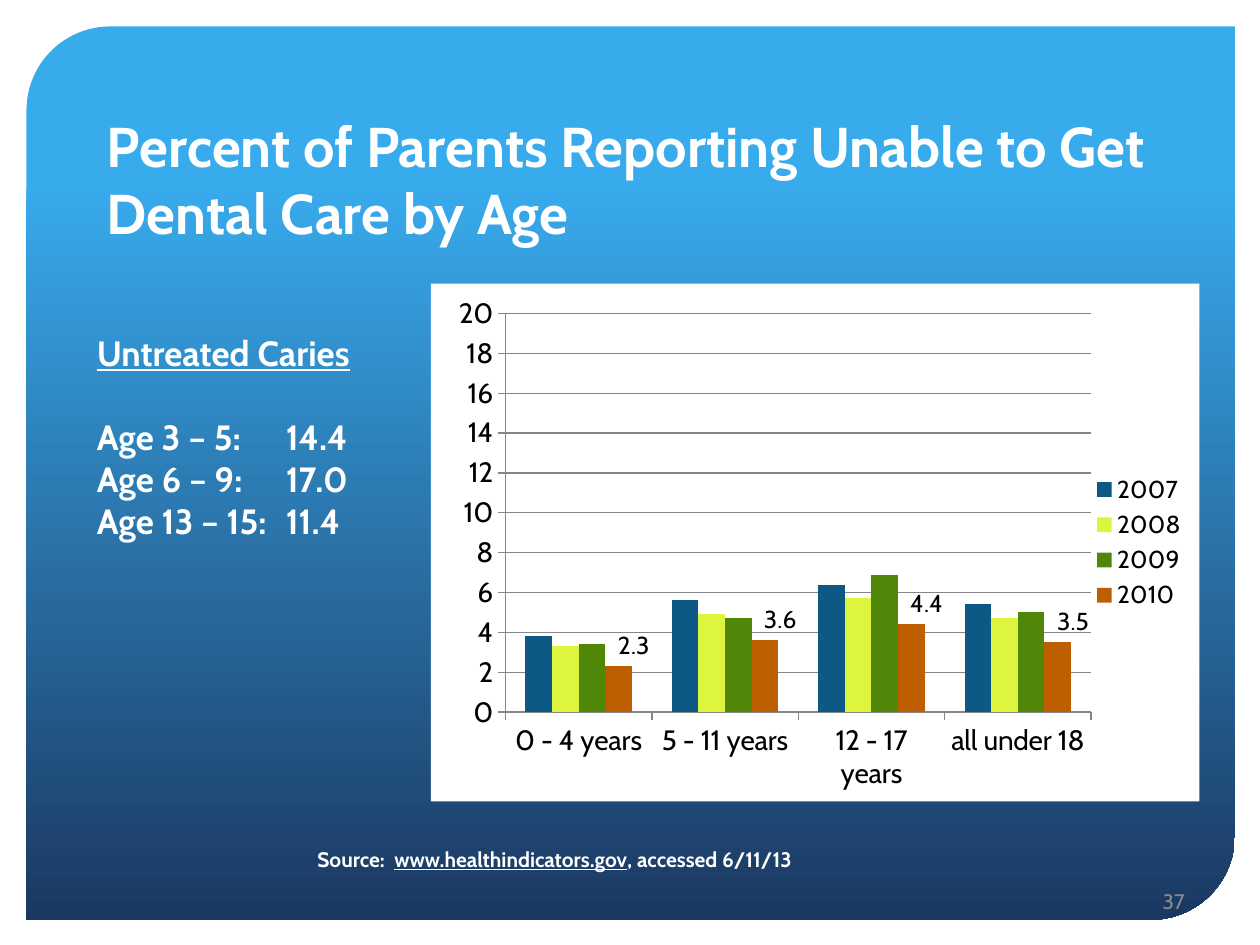
from lxml import etree
from pptx import Presentation
from pptx import util as u
from pptx.chart.data import CategoryChartData
from pptx.dml.color import RGBColor
from pptx.enum import chart as ch, shapes, text
from pptx.oxml import parse_xml
from pptx.oxml.ns import nsdecls, qn

Inches, Pt = u.Inches, u.Pt

FONT = "Cabin"
WHITE = RGBColor(0xFF, 0xFF, 0xFF)
BLACK = RGBColor(0, 0, 0)
SKY = RGBColor(0x38, 0xAB, 0xED)
NAVY = RGBColor(0x1B, 0x38, 0x61)
NUMBER_GRAY = RGBColor(0x8C, 0x8C, 0x8C)
GRID_GRAY = RGBColor(0x86, 0x86, 0x86)

AGE_GROUPS = ["0 - 4 years", "5 - 11 years", "12 - 17 years", "all under 18"]
YEARS = {
    "2007": ([3.8, 5.6, 6.4, 5.4], RGBColor(0x0C, 0x59, 0x86)),
    "2008": ([3.3, 4.9, 5.7, 4.7], RGBColor(0xDD, 0xF5, 0x3D)),
    "2009": ([3.4, 4.7, 6.9, 5.0], RGBColor(0x50, 0x87, 0x09)),
    "2010": ([2.3, 3.6, 4.4, 3.5], RGBColor(0xBF, 0x5E, 0x00)),
}
CARIES = [("Age 3 – 5:", "14.4"), ("Age 6 – 9:", "17.0"), ("Age 13 – 15:", "11.4")]


def add_run(paragraph, words, size, color=WHITE, bold=True, underline=False):
    run = paragraph.add_run()
    run.text = words
    font = run.font
    font.name, font.size, font.bold = FONT, Pt(size), bold
    font.color.rgb = color
    if underline:
        font.underline = True


def add_frame(slide, box, anchor=text.MSO_ANCHOR.TOP, wrap=True):
    frame = slide.shapes.add_textbox(*map(Inches, box)).text_frame
    frame.word_wrap = wrap
    frame.vertical_anchor = anchor
    return frame


def add_backdrop(slide, box):
    panel = slide.shapes.add_shape(
        shapes.MSO_SHAPE.ROUND_2_DIAG_RECTANGLE, *map(Inches, box))
    panel.shadow.inherit = False
    panel.adjustments[0], panel.adjustments[1] = 0.094, 0
    panel.line.fill.background()
    panel.fill.gradient()
    panel.fill.gradient_angle = 270
    for stop, position, color in zip(panel.fill.gradient_stops, (0.17, 1), (SKY, NAVY)):
        stop.position = position
        stop.color.rgb = color


def add_title(slide, box):
    frame = add_frame(slide, box, text.MSO_ANCHOR.BOTTOM)
    add_run(frame.paragraphs[0],
            "Percent of Parents Reporting Unable to Get Dental Care by Age", 32)


def add_page_number(slide, box):
    paragraph = add_frame(slide, box, text.MSO_ANCHOR.MIDDLE).paragraphs[0]
    paragraph.alignment = text.PP_ALIGN.RIGHT
    add_run(paragraph, "37", 12, NUMBER_GRAY, bold=False)


def add_caries_list(slide, box):
    frame = add_frame(slide, box, wrap=False)
    add_run(frame.paragraphs[0], "Untreated Caries", 20, underline=True)
    for row, (ages, percent) in enumerate(CARIES):
        paragraph = frame.add_paragraph()
        # The percentages line up on one tab stop
        tabs = etree.SubElement(paragraph._p.get_or_add_pPr(), qn("a:tabLst"))
        etree.SubElement(tabs, qn("a:tab"), pos=str(Inches(1.5)), algn="l")
        if row == 0:
            paragraph.space_before = Pt(24)
        add_run(paragraph, f"{ages}\t{percent}", 20)


def add_source(slide, box):
    paragraph = add_frame(slide, box, wrap=False).paragraphs[0]
    add_run(paragraph, "Source:  ", 12)
    add_run(paragraph, "www.healthindicators.gov", 12, underline=True)
    add_run(paragraph, ", accessed 6/11/13", 12)


def manual_layout(**settings):
    layout = parse_xml(f"<c:layout {nsdecls('c')}><c:manualLayout/></c:layout>")
    for tag, value in settings.items():
        etree.SubElement(layout[0], qn(f"c:{tag}"), val=str(value))
    return layout


def label_columns(series, count):
    for index in range(count):
        label = series.points[index].data_label
        label.font.size = Pt(14)
        label.font.color.rgb = BLACK
        label.position = ch.XL_LABEL_POSITION.OUTSIDE_END
        # Labels sit a little right of their columns
        label._dLbl.insert(1, manual_layout(x=0.02, y=0))


def add_age_chart(slide, box):
    data = CategoryChartData()
    data.categories = AGE_GROUPS
    for year, (percents, _) in YEARS.items():
        data.add_series(year, percents)
    chart = slide.shapes.add_chart(
        ch.XL_CHART_TYPE.COLUMN_CLUSTERED, *map(Inches, box), data).chart
    chart.has_title = False
    chart.font.name, chart.font.size = FONT, Pt(18)
    chart.font.color.rgb = BLACK

    # White chart area and fixed plot area
    chart._chartSpace.chart.addnext(parse_xml(
        f'<c:spPr {nsdecls("c", "a")}><a:solidFill><a:srgbClr val="{WHITE}"/>'
        "</a:solidFill><a:ln><a:noFill/></a:ln></c:spPr>"))
    plot_area = chart._chartSpace.chart.plotArea
    for old in plot_area.findall(qn("c:layout")):
        plot_area.remove(old)
    plot_area.insert(0, manual_layout(
        layoutTarget="inner", xMode="edge", yMode="edge",
        x=0.097, y=0.058, w=0.762, h=0.77))

    # Axes
    for axis in (chart.category_axis, chart.value_axis):
        axis.tick_labels.font.size = Pt(16)
        axis.major_tick_mark = ch.XL_TICK_MARK.OUTSIDE
        axis.format.line.color.rgb = GRID_GRAY
    values = chart.value_axis
    values.minimum_scale, values.maximum_scale, values.major_unit = 0, 20, 2
    values.has_major_gridlines = True
    values.major_gridlines.format.line.color.rgb = GRID_GRAY

    # Legend
    chart.has_legend = True
    chart.legend.position = ch.XL_LEGEND_POSITION.RIGHT
    chart.legend.include_in_layout = False
    chart.legend.font.size = Pt(14)

    # Columns, with values on the latest year only
    plot = chart.plots[0]
    plot.gap_width, plot.overlap = 150, 0
    plot.vary_by_categories = False
    for series in plot.series:
        series.format.fill.solid()
        series.format.fill.fore_color.rgb = YEARS[series.name][1]
    label_columns(plot.series[-1], len(AGE_GROUPS))


def main():
    prs = Presentation()
    prs.slide_width, prs.slide_height = Inches(10), Inches(7.5)
    slide = prs.slides.add_slide(prs.slide_layouts[6])
    add_backdrop(slide, (0.21, 0.21, 9.59, 7.09))
    add_page_number(slide, (7.17, 6.95, 2.33, 0.4))
    add_title(slide, (0.75, 0.67, 8.75, 1.33))
    add_age_chart(slide, (3.42, 2.25, 6.1, 4.11))
    add_source(slide, (2.42, 6.67, 4.41, 0.3))
    add_caries_list(slide, (0.67, 2.58, 2.57, 2.12))
    prs.save("out.pptx")


if __name__ == "__main__":
    main()
